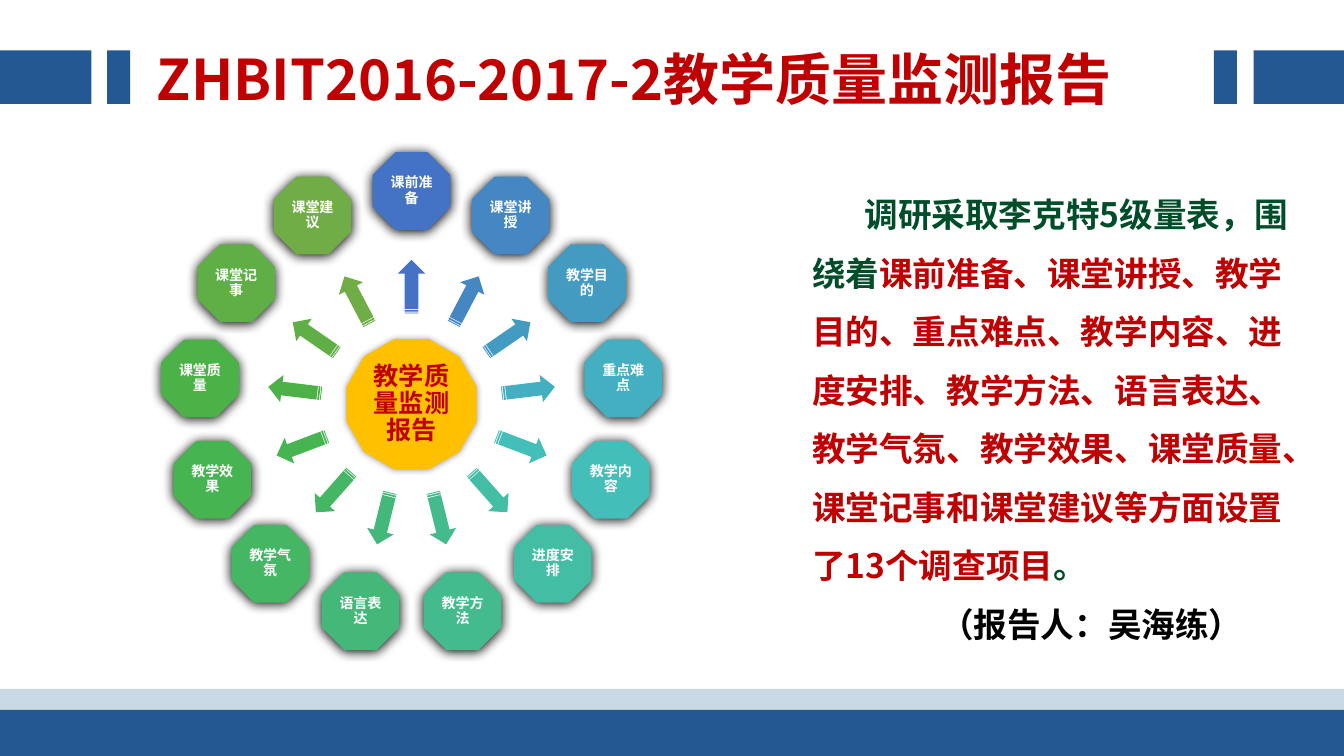
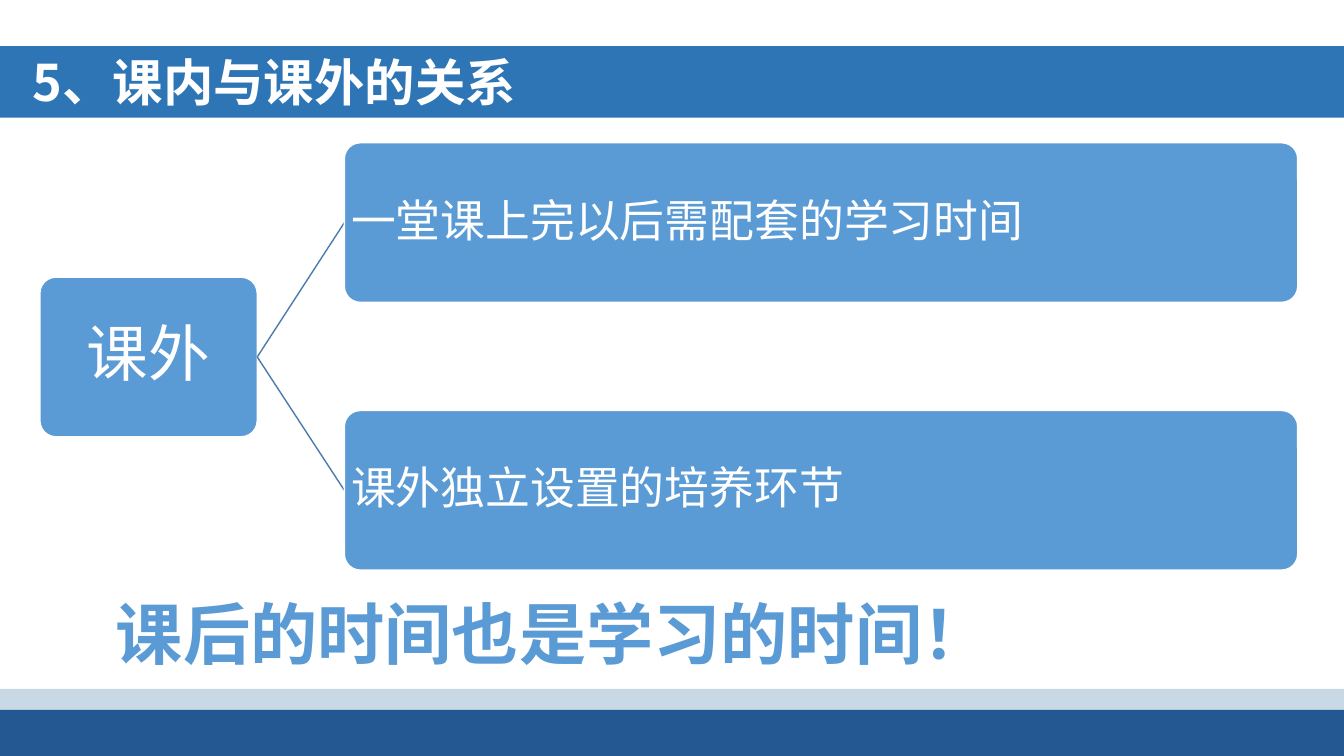
from math import cos, radians, sin

from lxml.etree import SubElement
from pptx import Presentation
from pptx.dml.color import RGBColor
from pptx.enum.shapes import MSO_CONNECTOR as Connector, MSO_SHAPE as Shape
from pptx.enum.text import MSO_ANCHOR as Anchor, PP_ALIGN as Align
from pptx.oxml.ns import qn
from pptx.util import Emu, Pt

PX = 9525
WIDTH, HEIGHT = 1280, 720
FONT = "Noto Sans CJK SC"

NAVY, PALE, BANNER, SKY, LINK = "235893", "C8D8E5", "2E75B6", "5B9BD5", "497CAB"
RED, GREEN, AMBER, WHITE, BLACK = "C00000", "004D2A", "FFC000", "FFFFFF", "000000"

TOPICS = [
    ("课前准备", "4472C4"), ("课堂讲授", "4487C3"), ("教学目的", "449BC1"),
    ("重点难点", "43AFC0"), ("教学内容", "43BEB9"), ("进度安排", "43BDA3"),
    ("教学方法", "43BB8D"), ("语言表达", "44B878"), ("教学气氛", "45B664"),
    ("教学效果", "45B451"), ("课堂质量", "4CB146"), ("课堂记事", "5FAF46"),
    ("课堂建议", "70AD47"),
]
REPORT = [
    ("调研采取李克特5级量表，围绕着", GREEN),
    ("课前准备、课堂讲授、教学目的、重点难点、教学内容、进度安排、教学方法、语言表达、"
     "教学气氛、教学效果、课堂质量、课堂记事和课堂建议等方面设置了13个调查项目", RED),
    ("。", GREEN),
]
REPORTER = [("（报告人：吴海练）", BLACK)]


def px(length):
    return Emu(round(length * PX))


def colour(value):
    return RGBColor.from_string(value)


def set_all(target, values):
    for name, value in values.items():
        setattr(target, name, value)


def add_figure(slide, kind, place, fill, outline=None):
    figure = slide.shapes.add_shape(kind, *map(px, place))
    figure.shadow.inherit = False
    figure.fill.solid()
    figure.fill.fore_color.rgb = colour(fill)
    if outline:
        figure.line.color.rgb = colour(outline)
        figure.line.width = Pt(1)
    else:
        figure.line.fill.background()
    return figure


def add_shadow(figure, opacity, blur, distance):
    """Black outer shadow falling downwards; opacity in percent, lengths in points."""
    effects = figure._element.spPr.find(qn("a:effectLst"))
    shadow = SubElement(effects, qn("a:outerShdw"), blurRad=str(Pt(blur)),
                        dist=str(Pt(distance)), dir="5400000", rotWithShape="0")
    tone = SubElement(shadow, qn("a:srgbClr"), val=BLACK)
    SubElement(tone, qn("a:alpha"), val=str(opacity * 1000))


def add_span(para, text, size, ink, bold):
    span = para.add_run()
    span.text = text
    set_all(span.font, {"name": FONT, "size": Pt(size), "bold": bold})
    span.font.color.rgb = colour(ink)
    SubElement(span._r.get_or_add_rPr(), qn("a:ea"), typeface=FONT)


def write(frame, spans, size, bold=True, indent=0, **para_format):
    """Fill the empty first paragraph, or append one, with (text, colour) spans."""
    para = frame.paragraphs[0]
    if para.runs:
        para = frame.add_paragraph()
    set_all(para, {"alignment": Align.LEFT, **para_format})
    if indent:
        para._p.get_or_add_pPr().set("indent", str(px(indent)))
    for text, ink in spans:
        add_span(para, text, size, ink, bold)


def add_text_box(slide, place, wrap=True):
    frame = slide.shapes.add_textbox(*map(px, place)).text_frame
    frame.word_wrap = wrap
    return frame


def label(figure, text, size, ink, inset, bold=True, align=Align.CENTER):
    """Write one vertically centred label inside a shape."""
    frame = figure.text_frame
    margins = {f"margin_{side}": px(inset) for side in ("left", "top", "right", "bottom")}
    set_all(frame, {"word_wrap": True, "vertical_anchor": Anchor.MIDDLE, **margins})
    write(frame, [(text, ink)], size, bold, alignment=align, line_spacing=0.9)


def add_link(slide, start, end):
    link = slide.shapes.add_connector(Connector.STRAIGHT, *map(px, (*start, *end)))
    link.line.color.rgb = colour(LINK)
    link.line.width = Pt(1)
    SubElement(link._element.spPr, qn("a:effectLst"))


def add_page(deck):
    page = deck.slides.add_slide(deck.slide_layouts[6])
    add_figure(page, Shape.RECTANGLE, (0, 656, WIDTH, 53), PALE)
    add_figure(page, Shape.RECTANGLE, (0, 676, WIDTH, 44), NAVY)
    return page


def add_title_tabs(page):
    for left, width in ((0, 87), (102, 22), (1194, 86), (1156, 22)):
        add_figure(page, Shape.RECTANGLE, (left, 48, width, 51), NAVY)


def centred(x, y, width, height):
    return x - width / 2, y - height / 2, width, height


def add_wheel(page, centre_x, centre_y):
    """Hub with one arrow and one octagon per topic, clockwise from the top."""
    hub = add_figure(page, Shape.DODECAGON, centred(centre_x, centre_y, 124, 124), AMBER)
    add_shadow(hub, 40, 5, 0)
    label(hub, "教学质量监测报告", 18, RED, inset=3)

    for index, (topic, fill) in enumerate(TOPICS):
        angle = index * 360 / len(TOPICS) - 90
        across, down = cos(radians(angle)), sin(radians(angle))

        arrow_place = centred(centre_x + 112 * across, centre_y + 112 * down, 51, 26)
        arrow = add_figure(page, Shape.STRIPED_RIGHT_ARROW, arrow_place, fill)
        arrow.rotation = angle % 360

        topic_place = centred(centre_x + 203 * across, centre_y + 203 * down, 74, 74)
        octagon = add_figure(page, Shape.OCTAGON, topic_place, fill)
        add_shadow(octagon, 100, 8.5, 1)
        label(octagon, topic, 10, WHITE, inset=1)


def add_tree_box(page, place, text, size, inset, align):
    box = add_figure(page, Shape.ROUNDED_RECTANGLE, place, SKY, outline=WHITE)
    box.adjustments[0] = 0.1
    label(box, text, size, WHITE, inset, bold=False, align=align)


def add_tree(page, root, branches):
    left, top, width, height = 38, 264, 207, 152
    branch_left, branch_width, first_top, step = 328, 908, 136, 255
    add_tree_box(page, (left, top, width, height), root, 44, 3, Align.CENTER)
    for index, text in enumerate(branches):
        branch_top = first_top + index * step
        add_link(page, (left + width, top + height / 2),
                 (branch_left, branch_top + height / 2))
        add_tree_box(page, (branch_left, branch_top, branch_width, height),
                     text, 32, 2, Align.LEFT)


def build_report_page(deck):
    page = add_page(deck)
    add_title_tabs(page)
    title = add_text_box(page, (140, 38, 1107, 74))
    write(title, [("ZHBIT2016-2017-2教学质量监测报告", RED)], 40)
    add_wheel(page, 392, 385)
    body = add_text_box(page, (764, 163, 485, 459))
    write(body, REPORT, 24, indent=50, line_spacing=1.45)
    write(body, REPORTER, 24, indent=122, line_spacing=1.45)


def build_relation_page(deck):
    page = add_page(deck)
    banner = add_figure(page, Shape.RECTANGLE, (0, 44, WIDTH, 68), BANNER)
    set_all(banner.text_frame, {"vertical_anchor": Anchor.TOP, "margin_left": px(31)})
    write(banner.text_frame, [("5、课内与课外的关系", WHITE)], 36)
    add_tree(page, "课外", ["一堂课上完以后需配套的学习时间", "课外独立设置的培养环节"])
    closing = add_text_box(page, (101, 559, 852, 87), wrap=False)
    write(closing, [("课后的时间也是学习的时间！", SKY)], 48)


def main():
    deck = Presentation()
    set_all(deck, {"slide_width": px(WIDTH), "slide_height": px(HEIGHT)})
    build_report_page(deck)
    build_relation_page(deck)
    deck.save("out.pptx")


if __name__ == "__main__":
    main()
